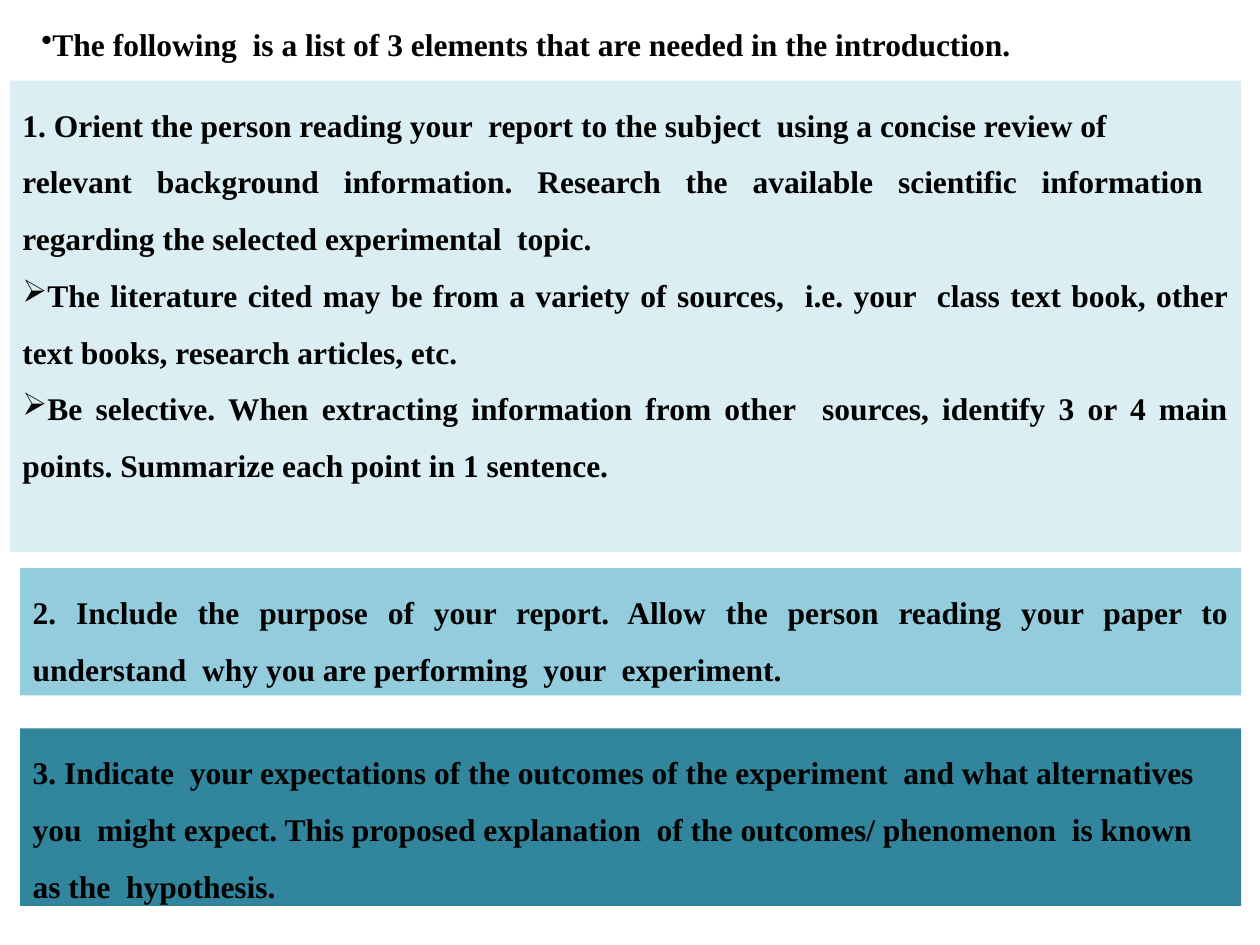
from lxml import etree
from pptx import Presentation
from pptx.dml.color import RGBColor
from pptx.enum.shapes import MSO_SHAPE
from pptx.enum.text import MSO_ANCHOR, PP_ALIGN
from pptx.oxml.ns import qn
from pptx.util import Inches, Pt

RECTANGLE = MSO_SHAPE.RECTANGLE
TOP = MSO_ANCHOR.TOP
LEFT, JUSTIFY = PP_ALIGN.LEFT, PP_ALIGN.JUSTIFY
BLACK = RGBColor(0x00, 0x00, 0x00)
PALE_TEAL = RGBColor(0xDB, 0xEE, 0xF4)
LIGHT_TEAL = RGBColor(0x93, 0xCD, 0xDD)
DARK_TEAL = RGBColor(0x31, 0x85, 0x9C)
FONT = "Times New Roman"

LEAD_IN = [
    ("•", "The following  is a list of 3 elements that are needed in the introduction.  "),
]
ORIENTATION = [
    ("", "1. Orient the person reading your  report to the subject  using a concise review of "),
    ("", "relevant background information. Research the available scientific information  "
         "regarding the selected experimental  topic."),
    ("➢", "The literature cited may be from a variety of sources,  i.e. your  class text book, "
          "other text books, research articles, etc. "),
    ("➢", "Be selective. When extracting information from other  sources, identify 3 or 4 main "
          "points. Summarize each point in 1 sentence. "),
]
PURPOSE = [
    ("", "2. Include the purpose of your report. Allow the person reading your paper to "
         "understand  why you are performing  your  experiment."),
]
HYPOTHESIS = [
    ("", "3. Indicate  your expectations of the outcomes of the experiment  and what "
         "alternatives  you  might expect. This proposed explanation  of the outcomes/ "
         "phenomenon  is known  as the  hypothesis."),
]


def add_bullet(paragraph, symbol):
    """Put a bullet symbol directly before the paragraph's text."""
    properties = paragraph._p.get_or_add_pPr()
    properties.set("marL", "0")
    properties.set("indent", "0")
    etree.SubElement(properties, qn("a:buChar")).set("char", symbol)


def write_paragraphs(frame, entries, alignment):
    """Fill a text frame with bold, widely spaced paragraphs."""
    frame.word_wrap = True
    frame.vertical_anchor = TOP
    for index, (symbol, wording) in enumerate(entries):
        paragraph = frame.add_paragraph() if index else frame.paragraphs[0]
        paragraph.text = wording
        paragraph.alignment = alignment
        paragraph.line_spacing = 1.5
        if symbol:
            add_bullet(paragraph, symbol)
        font = paragraph.runs[0].font
        font.name, font.size, font.bold = FONT, Pt(18), True
        font.color.rgb = BLACK


def add_lead_in(slide, box):
    """Add the sentence that announces the list."""
    lead_in = slide.shapes.add_textbox(*map(Inches, box))
    write_paragraphs(lead_in.text_frame, LEAD_IN, JUSTIFY)


def add_element_panel(slide, box, color, entries, alignment=JUSTIFY):
    """Add a filled panel that describes one element of the introduction."""
    panel = slide.shapes.add_shape(RECTANGLE, *map(Inches, box))
    panel.shadow.inherit = False
    panel.fill.solid()
    panel.fill.fore_color.rgb = color
    panel.line.fill.background()
    write_paragraphs(panel.text_frame, entries, alignment)


def main():
    """Build and save the slide."""
    presentation = Presentation()
    presentation.slide_width, presentation.slide_height = Inches(10), Inches(7.5)
    slide = presentation.slides.add_slide(presentation.slide_layouts[6])
    add_element_panel(slide, (0.08, 0.64, 9.77, 3.74), PALE_TEAL, ORIENTATION)
    add_element_panel(slide, (0.16, 4.51, 9.69, 1.01), LIGHT_TEAL, PURPOSE)
    add_lead_in(slide, (0.23, 0, 9.06, 0.5))
    add_element_panel(slide, (0.16, 5.78, 9.69, 1.41), DARK_TEAL, HYPOTHESIS, LEFT)
    presentation.save("out.pptx")


if __name__ == "__main__":
    main()
